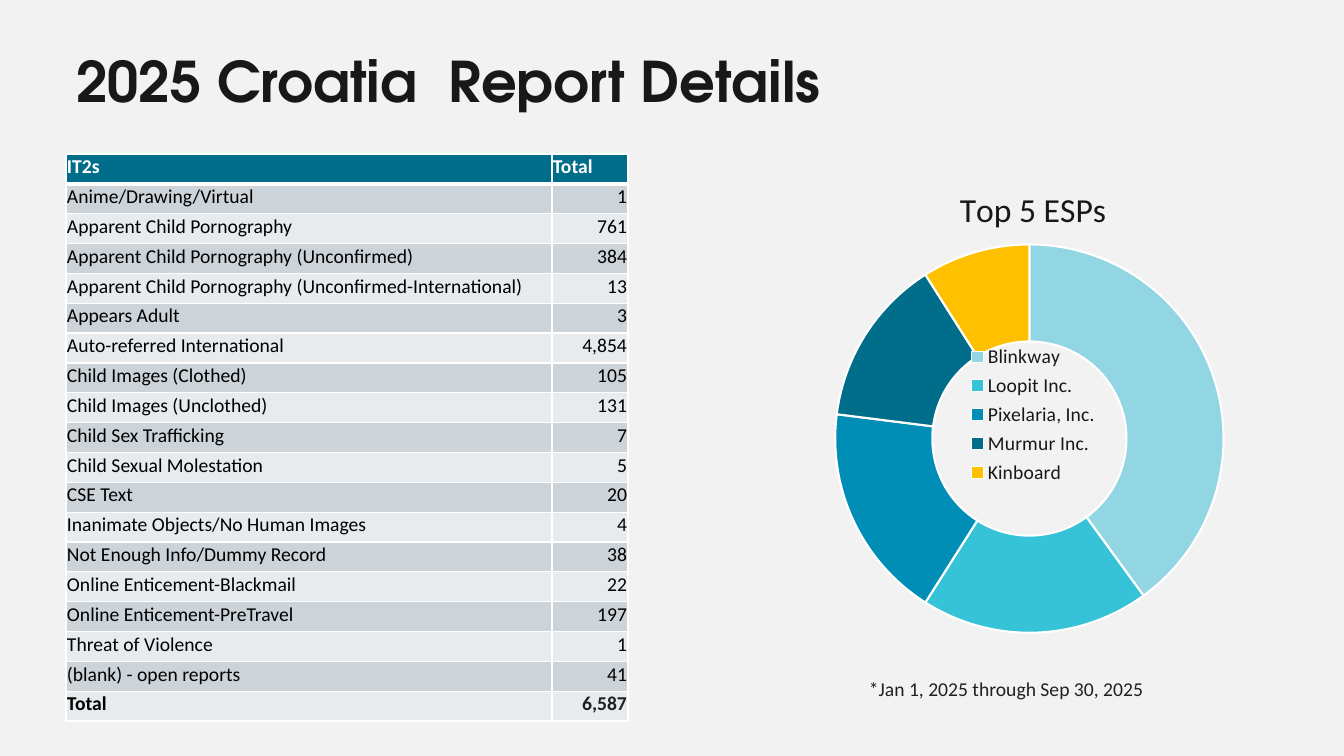
import lxml.etree
import pptx
import pptx.chart.data
import pptx.dml.color
import pptx.enum.chart
import pptx.enum.text
import pptx.oxml.ns
import pptx.util

HUES = {
    "paper": "F2F2F2", "title": "181818", "ink": "202020", "black": "000000",
    "white": "FFFFFF", "teal": "006D8A", "dark": "CCD4DA", "light": "E7EBED",
    "sky": "92D6E3", "aqua": "36C2D7", "blue": "008EB7", "gold": "FFC000",
}
COUNTS = [
    ("IT2s", "Total"),
    ("Anime/Drawing/Virtual", "1"),
    ("Apparent Child Pornography", "761"),
    ("Apparent Child Pornography (Unconfirmed)", "384"),
    ("Apparent Child Pornography (Unconfirmed-International)", "13"),
    ("Appears Adult", "3"),
    ("Auto-referred International", "4,854"),
    ("Child Images (Clothed)", "105"),
    ("Child Images (Unclothed)", "131"),
    ("Child Sex Trafficking", "7"),
    ("Child Sexual Molestation", "5"),
    ("CSE Text", "20"),
    ("Inanimate Objects/No Human Images", "4"),
    ("Not Enough Info/Dummy Record", "38"),
    ("Online Enticement-Blackmail", "22"),
    ("Online Enticement-PreTravel", "197"),
    ("Threat of Violence", "1"),
    ("(blank) - open reports", "41"),
    ("Total", "6,587"),
]
SHARES = [
    ("Blinkway", 40, "sky"),
    ("Loopit Inc.", 19, "aqua"),
    ("Pixelaria, Inc.", 18, "blue"),
    ("Murmur Inc.", 14, "teal"),
    ("Kinboard", 9, "gold"),
]
SCALE = 914400 / 100.8


def px(size):
    return round(size * SCALE)


def hue(name):
    return pptx.dml.color.RGBColor.from_string(HUES[name])


def tag(name, **vals):
    return lxml.etree.Element(pptx.oxml.ns.qn(name), vals)


class Deck:
    face = "Calibri"
    head = "TeX Gyre Adventor"

    def __init__(self):
        self.prs = pptx.Presentation()
        self.prs.slide_width = px(1344)
        self.prs.slide_height = px(756)
        self.slide = self.prs.slides.add_slide(self.prs.slide_layouts[5])
        fill = self.slide.background.fill
        fill.solid()
        fill.fore_color.rgb = hue("paper")

    def style(self, font, size, color, bold=False, face=None):
        font.name = face or self.face
        font.size = pptx.util.Pt(size)
        font.bold = bold
        font.color.rgb = hue(color)

    def title(self, text, left, top, width, height):
        box = self.slide.shapes.title
        box.left, box.top = px(left), px(top)
        box.width, box.height = px(width), px(height)
        frame = box.text_frame
        frame.text = text
        frame.word_wrap = True
        frame.auto_size = pptx.enum.text.MSO_AUTO_SIZE.NONE
        frame.vertical_anchor = pptx.enum.text.MSO_ANCHOR.MIDDLE
        line = frame.paragraphs[0]
        line.alignment = pptx.enum.text.PP_ALIGN.LEFT
        self.style(line.runs[0].font, 40, "title", True, self.head)

    def note(self, text, left, top, width, height):
        box = self.slide.shapes.add_textbox(px(left), px(top), px(width), px(height))
        frame = box.text_frame
        frame.text = text
        frame.word_wrap = True
        frame.auto_size = pptx.enum.text.MSO_AUTO_SIZE.SHAPE_TO_FIT_TEXT
        self.style(frame.paragraphs[0].runs[0].font, 14, "ink")

    def edges(self, cell, base):
        props = cell._tc.get_or_add_tcPr()
        for spot, side in enumerate("LRTB"):
            points = base if side == "B" else 1
            line = tag(f"a:ln{side}", w=str(pptx.util.Pt(points)))
            fill = tag("a:solidFill")
            fill.append(tag("a:srgbClr", val=HUES["white"]))
            line.append(fill)
            props.insert(spot, line)

    def table(self, rows, left, top, widths, height):
        grid = self.slide.shapes.add_table(
            len(rows), len(widths), px(left), px(top), px(sum(widths)), px(height)).table
        for col, width in zip(grid.columns, widths):
            col.width = px(width)
        last = len(rows) - 1
        for i, row in enumerate(rows):
            for j, text in enumerate(row):
                cell = grid.cell(i, j)
                cell.text = text
                cell.margin_left = cell.margin_right = cell.margin_top = px(1)
                cell.margin_bottom = px(5)
                cell.vertical_anchor = pptx.enum.text.MSO_ANCHOR.BOTTOM
                cell.fill.solid()
                cell.fill.fore_color.rgb = hue("teal" if i == 0 else "dark" if i % 2 else "light")
                self.edges(cell, 3 if i == 0 else 1)
                line = cell.text_frame.paragraphs[0]
                if i and j:
                    line.alignment = pptx.enum.text.PP_ALIGN.RIGHT
                ink = "white" if i == 0 else "ink" if i == last and j else "black"
                self.style(line.runs[0].font, 14, ink, i in (0, last))

    def place(self, part, spot, inner=False, **sizes):
        for old in part.findall(pptx.oxml.ns.qn("c:layout")):
            part.remove(old)
        layout, manual = tag("c:layout"), tag("c:manualLayout")
        layout.append(manual)
        if inner:
            manual.append(tag("c:layoutTarget", val="inner"))
        for key in "xy":
            manual.append(tag(f"c:{key}Mode", val="edge"))
        for key, val in sizes.items():
            manual.append(tag(f"c:{key}", val=str(val)))
        part.insert(spot, layout)

    def ring(self, name, shares, left, top, width, height):
        data = pptx.chart.data.CategoryChartData()
        data.categories = [label for label, _, _ in shares]
        data.add_series(name, [val for _, val, _ in shares])
        chart = self.slide.shapes.add_chart(
            pptx.enum.chart.XL_CHART_TYPE.DOUGHNUT,
            px(left), px(top), px(width), px(height), data).chart
        self.style(chart.font, 10, "ink")
        chart.has_title = True
        frame = chart.chart_title.text_frame
        frame.text = name
        self.style(frame.paragraphs[0].runs[0].font, 24, "title")
        chart.has_legend = True
        legend = chart.legend
        legend.position = pptx.enum.chart.XL_LEGEND_POSITION.BOTTOM
        legend.include_in_layout = False
        self.style(legend.font, 14, "title")
        plot = chart.plots[0]
        plot.vary_by_categories = True
        for i, (_, _, color) in enumerate(shares):
            form = plot.series[0].points[i].format
            form.fill.solid()
            form.fill.fore_color.rgb = hue(color)
            form.line.color.rgb = hue("white")
            form.line.width = pptx.util.Pt(1.5)
        root = chart.element
        qn = pptx.oxml.ns.qn
        next(root.iter(qn("c:holeSize"))).set("val", "75")
        self.place(next(root.iter(qn("c:title"))), 1, x=0.41, y=0.05)
        self.place(next(root.iter(qn("c:legend"))), 1, x=0.42, y=0.35, w=0.18, h=0.28)
        self.place(next(root.iter(qn("c:plotArea"))), 0, True, x=0.26, y=0.17, w=0.49, h=0.73)


def main():
    deck = Deck()
    deck.table(COUNTS, 66, 154, (486, 76), 558)
    deck.title("2025 Croatia  Report Details", 66, 33, 873, 95)
    deck.note("*Jan 1, 2025 through Sep 30, 2025", 859, 672, 312, 34)
    deck.ring("Top 5 ESPs", SHARES, 627, 154, 797, 532)
    deck.prs.save("out.pptx")


if __name__ == "__main__":
    main()
